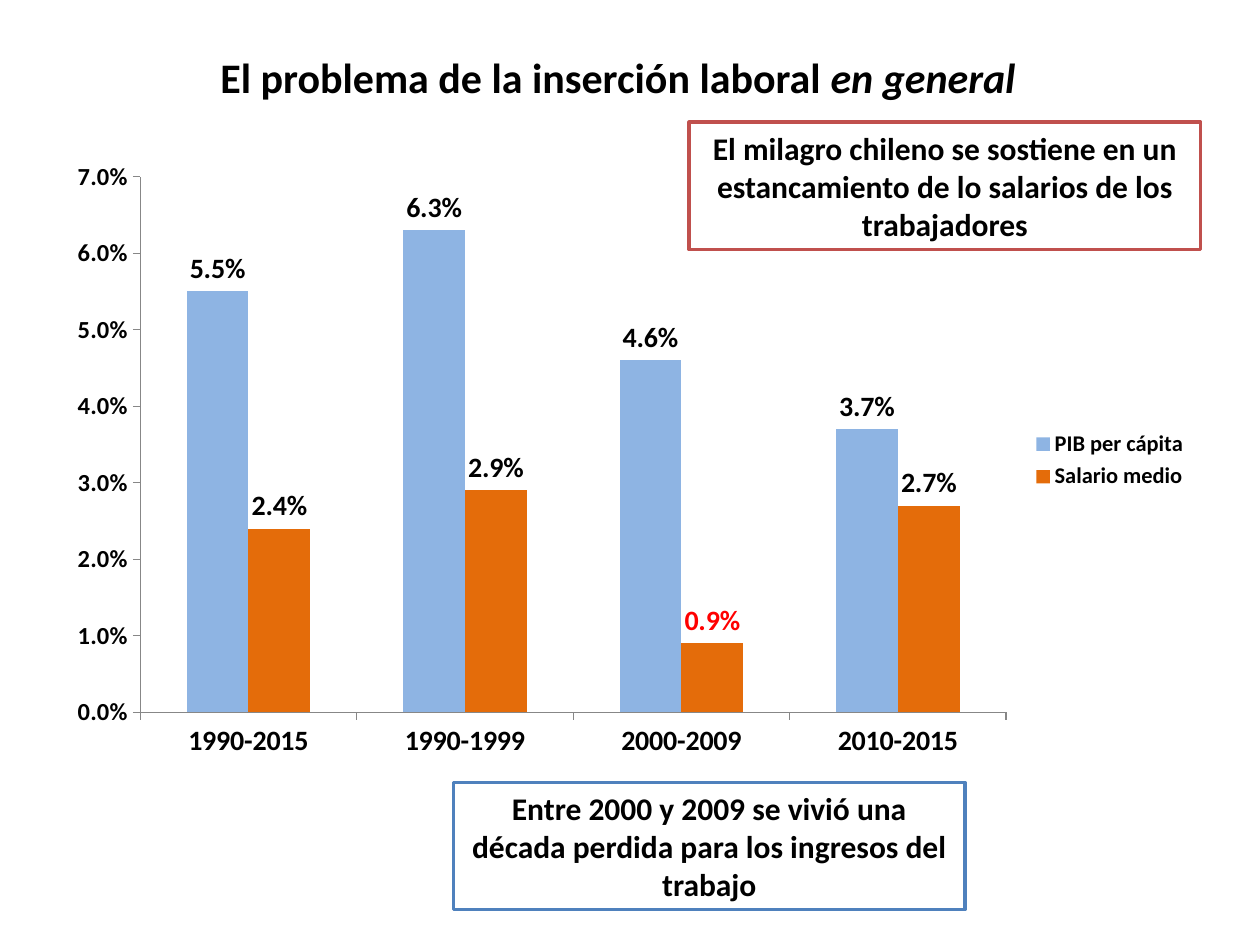
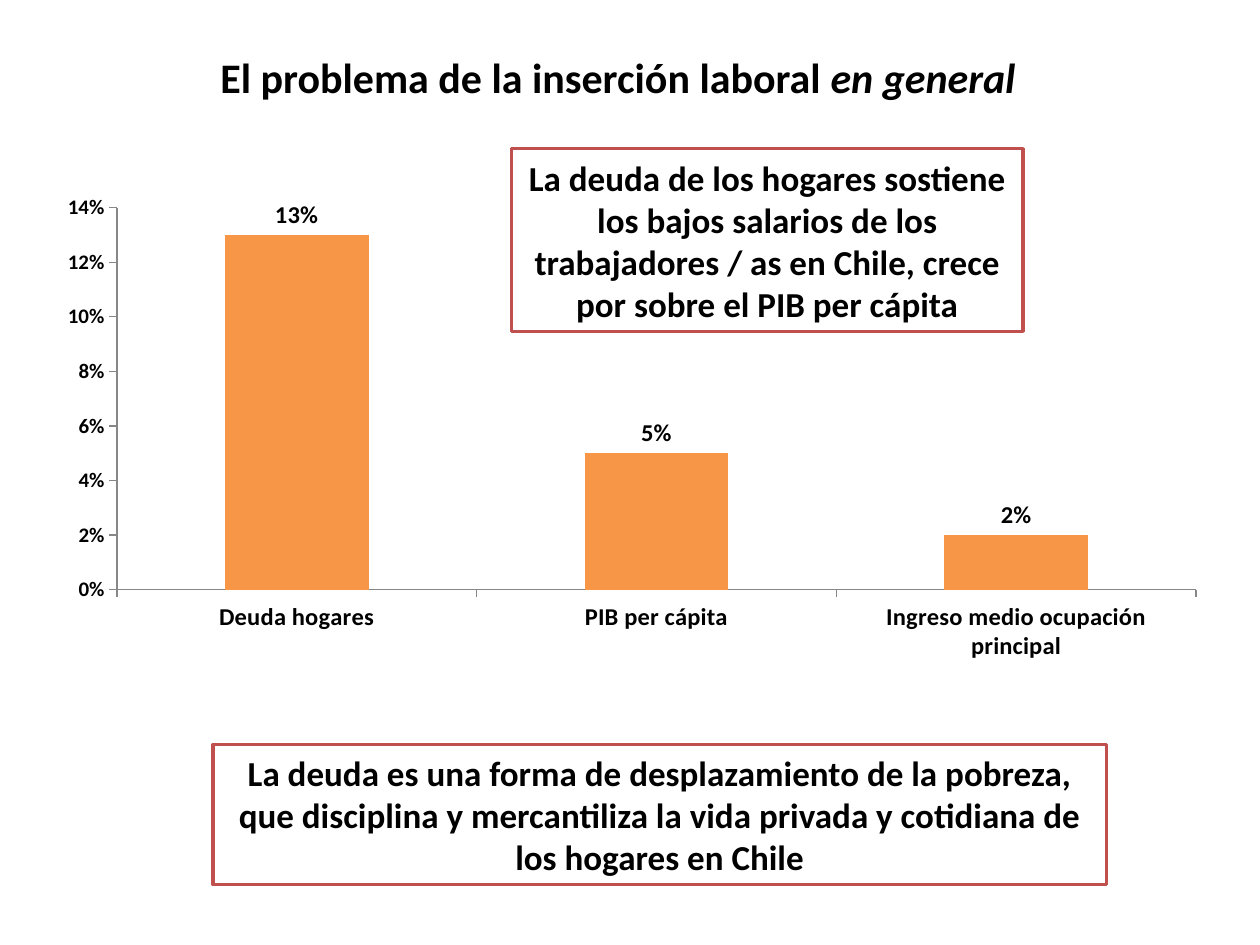
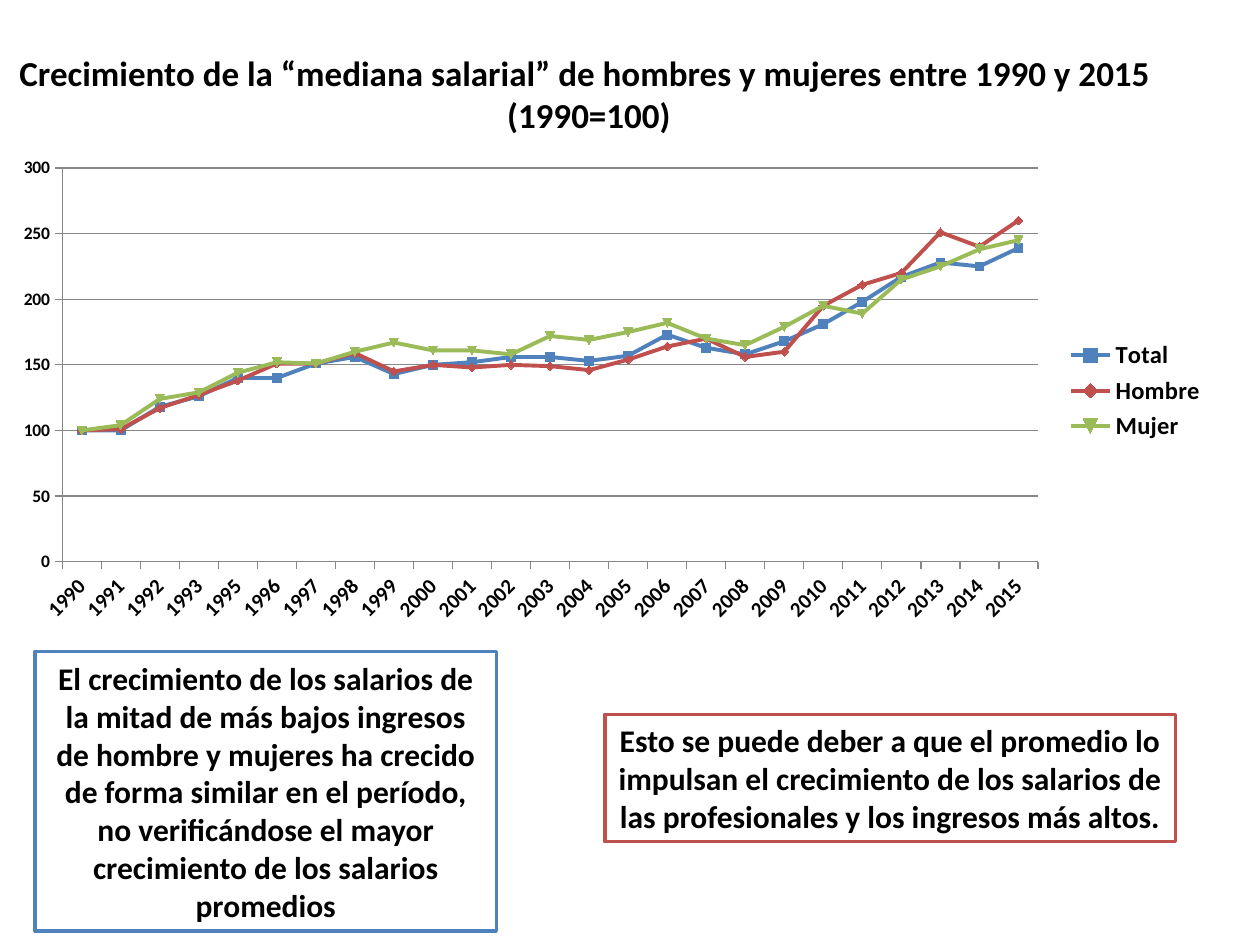
from pptx import Presentation
from pptx.chart.data import CategoryChartData
from pptx.dml.color import RGBColor
from pptx.enum.chart import XL_CHART_TYPE, XL_LABEL_POSITION, XL_LEGEND_POSITION, XL_TICK_MARK
from pptx.enum.shapes import MSO_SHAPE
from pptx.enum.text import MSO_ANCHOR, MSO_AUTO_SIZE, PP_ALIGN
from pptx.oxml import parse_xml
from pptx.oxml.ns import nsdecls
from pptx.util import Inches, Pt

COLUMNS = XL_CHART_TYPE.COLUMN_CLUSTERED
LINES = XL_CHART_TYPE.LINE
OUTSIDE_END = XL_LABEL_POSITION.OUTSIDE_END
LEGEND_RIGHT = XL_LEGEND_POSITION.RIGHT
TICK_OUTSIDE = XL_TICK_MARK.OUTSIDE
RECTANGLE = MSO_SHAPE.RECTANGLE
TOP, MIDDLE = MSO_ANCHOR.TOP, MSO_ANCHOR.MIDDLE
NO_FIT = MSO_AUTO_SIZE.NONE
CENTER = PP_ALIGN.CENTER

FONT = "Calibri"
TITLE_ONLY = 5
COLORS = {
    "text": "000000", "paper": "FFFFFF", "axis": "878787", "alert": "FF0000",
    "blue": "4F81BD", "red": "C0504D", "green": "9BBB59", "orange": "F79646",
    "light blue": "8EB4E3", "dark orange": "E46C0A",
}


def color(name):
    return RGBColor.from_string(COLORS[name])


class Deck:
    """Holds the shared style and the current slide."""

    def __init__(self):
        self.presentation = Presentation()
        self.presentation.slide_width = Inches(10)
        self.presentation.slide_height = Inches(7.5)
        self.slide = None

    def style_font(self, font, size, color_name="text"):
        font.name = FONT
        font.size = Pt(size)
        font.bold = True
        font.color.rgb = color(color_name)

    def add_slide(self, title, emphasis="", size=24, left=0.28, width=9.25):
        layout = self.presentation.slide_layouts[TITLE_ONLY]
        self.slide = self.presentation.slides.add_slide(layout)
        shape = self.slide.shapes.title
        shape.left, shape.top = Inches(left), Inches(0.36)
        shape.width, shape.height = Inches(width), Inches(0.82)
        text_frame = shape.text_frame
        text_frame.text = title
        text_frame.word_wrap = True
        text_frame.auto_size = NO_FIT
        text_frame.vertical_anchor = TOP
        paragraph = text_frame.paragraphs[0]
        paragraph.alignment = CENTER
        if emphasis:
            run = paragraph.add_run()
            run.text = emphasis
            run.font.italic = True
        for run in paragraph.runs:
            self.style_font(run.font, size)

    def add_callout(self, text, left, top, width, height, line, size=18):
        shape = self.slide.shapes.add_shape(
            RECTANGLE, Inches(left), Inches(top), Inches(width), Inches(height))
        shape.shadow.inherit = False
        shape.fill.solid()
        shape.fill.fore_color.rgb = color("paper")
        shape.line.color.rgb = color(line)
        shape.line.width = Pt(2)
        text_frame = shape.text_frame
        text_frame.text = text
        text_frame.word_wrap = True
        text_frame.vertical_anchor = MIDDLE
        paragraph = text_frame.paragraphs[0]
        paragraph.alignment = CENTER
        self.style_font(paragraph.runs[0].font, size)

    def add_chart(self, kind, box, plot, categories, series, number_format):
        """Each series is a tuple of name, values and colour name."""
        data = CategoryChartData(number_format=number_format)
        data.categories = categories
        for name, values, _ in series:
            data.add_series(name, values)
        frame = self.slide.shapes.add_chart(kind, *map(Inches, box), data)
        chart = frame.chart
        chart.has_title = False
        chart.has_legend = False
        chart.font.name = FONT
        chart.font.size = Pt(10)
        chart.font.color.rgb = color("text")
        self.place_plot(chart, plot)
        chart.plots[0].vary_by_categories = False
        for chart_series, (_, _, color_name) in zip(chart.plots[0].series, series):
            if kind == LINES:
                chart_series.smooth = False
                chart_series.marker.style = None
                chart_series.format.line.color.rgb = color(color_name)
                chart_series.format.line.width = Pt(2.25)
            else:
                chart_series.format.fill.solid()
                chart_series.format.fill.fore_color.rgb = color(color_name)
        if kind == COLUMNS:
            chart.plots[0].gap_width = 150
            chart.plots[0].overlap = 0
        return chart

    def place_plot(self, chart, plot):
        values = "".join(f'<c:{tag} val="{value}"/>' for tag, value in zip("xywh", plot))
        layout = parse_xml(
            f'<c:layout {nsdecls("c")}><c:manualLayout><c:layoutTarget val="inner"/>'
            f'<c:xMode val="edge"/><c:yMode val="edge"/>{values}</c:manualLayout></c:layout>')
        plot_area = chart.plots[0]._element.getparent()
        for old_layout in plot_area.findall(layout.tag):
            plot_area.remove(old_layout)
        plot_area.insert(0, layout)

    def style_axes(self, chart, category_size, value_size, maximum, step, number_format,
                   gridlines=False):
        value_axis = chart.value_axis
        for axis, size in ((chart.category_axis, category_size), (value_axis, value_size)):
            axis.major_tick_mark = TICK_OUTSIDE
            axis.format.line.color.rgb = color("axis")
            self.style_font(axis.tick_labels.font, size)
        value_axis.minimum_scale = 0
        value_axis.maximum_scale = maximum
        value_axis.major_unit = step
        value_axis.tick_labels.number_format = number_format
        value_axis.tick_labels.number_format_is_linked = False
        value_axis.has_major_gridlines = gridlines
        if gridlines:
            value_axis.major_gridlines.format.line.color.rgb = color("axis")

    def add_labels(self, chart, size, number_format):
        for series in chart.plots[0].series:
            labels = series.data_labels
            labels.show_value = True
            labels.position = OUTSIDE_END
            labels.number_format = number_format
            labels.number_format_is_linked = False
            self.style_font(labels.font, size)

    def add_legend(self, chart, size):
        chart.has_legend = True
        chart.legend.position = LEGEND_RIGHT
        chart.legend.include_in_layout = False
        self.style_font(chart.legend.font, size)


def growth_slide(deck):
    deck.add_slide("El problema de la inserción laboral ", "en general")
    chart = deck.add_chart(
        COLUMNS, (0.44, 1.18, 9.09, 4.95), (0.074, 0.045, 0.756, 0.859),
        ["1990-2015", "1990-1999", "2000-2009", "2010-2015"],
        [("PIB per cápita", (0.055, 0.063, 0.046, 0.037), "light blue"),
         ("Salario medio", (0.024, 0.029, 0.009, 0.027), "dark orange")], "0.0%")
    deck.style_axes(chart, 16, 14, 0.07, 0.01, "0.0%")
    deck.add_labels(chart, 16, "0.0%")
    deck.add_legend(chart, 12.8)
    # Lost decade in red
    lost_decade = chart.plots[0].series[1].points[2].data_label
    deck.style_font(lost_decade.font, 16, "alert")
    lost_decade.position = OUTSIDE_END
    deck.add_callout("El milagro chileno se sostiene en un estancamiento de lo salarios "
                     "de los trabajadores", 5.47, 0.97, 4.06, 1.01, "red")
    deck.add_callout("Entre 2000 y 2009 se vivió una década perdida para los ingresos "
                     "del trabajo", 3.6, 6.21, 4.06, 1.01, "blue")


def debt_slide(deck):
    deck.add_slide("El problema de la inserción laboral ", "en general")
    chart = deck.add_chart(
        COLUMNS, (0.28, 1.55, 9.25, 3.7), (0.07, 0.027, 0.926, 0.832),
        ["Deuda hogares", "PIB per cápita", "Ingreso medio ocupación principal"],
        [("Series 1", (0.13, 0.05, 0.02), "orange")], "0%")
    deck.style_axes(chart, 14, 12, 0.14, 0.02, "0%")
    deck.add_labels(chart, 14, "0%")
    deck.add_callout("La deuda de los hogares sostiene los bajos salarios de los "
                     "trabajadores / as en Chile, crece por sobre el PIB per cápita",
                     4.06, 1.18, 4.06, 1.45, "red", 20)
    deck.add_callout("La deuda es una forma de desplazamiento de la pobreza, que disciplina "
                     "y mercantiliza la vida privada y cotidiana de los hogares en Chile",
                     1.69, 5.91, 7.09, 1.11, "red", 20)


def median_slide(deck):
    deck.add_slide("Crecimiento de la “mediana salarial” de hombres y mujeres entre 1990 y 2015 "
                   "\v(1990=100)", size=20, left=-0.09, width=9.53)
    years = [str(year) for year in range(1990, 2016) if year != 1994]
    total = (100, 100, 118, 126, 140, 140, 151, 156, 143, 150, 152, 156, 156,
             153, 157, 173, 163, 158, 168, 181, 198, 217, 228, 225, 239)
    men = (100, 101, 117, 127, 138, 151, 151, 159, 145, 150, 148, 150, 149,
           146, 154, 164, 170, 156, 160, 195, 211, 220, 251, 240, 260)
    women = (100, 104, 124, 129, 144, 152, 151, 160, 167, 161, 161, 158, 172,
             169, 175, 182, 170, 165, 179, 195, 189, 215, 225, 238, 245)
    chart = deck.add_chart(
        LINES, (0, 1.18, 9.67, 3.84), (0.051, 0.04, 0.801, 0.814), years,
        [("Total", total, "blue"), ("Hombre", men, "red"), ("Mujer", women, "green")], "0")
    deck.style_axes(chart, 12, 10, 300, 50, "0", gridlines=True)
    deck.add_legend(chart, 14)
    # Slanted years
    chart.category_axis._element.txPr.bodyPr.set("rot", "-2700000")
    deck.add_callout("El crecimiento de los salarios de la mitad de más bajos ingresos de "
                     "hombre y mujeres ha crecido de forma similar en el período, no "
                     "verificándose el mayor crecimiento de los salarios promedios",
                     0.28, 5.17, 3.66, 2.22, "blue")
    deck.add_callout("Esto se puede deber a que el promedio lo impsulan el crecimiento de los "
                     "salarios de las profesionales y los ingresos más altos.".replace(
                         "impsulan", "impulsan"), 4.8, 5.67, 4.53, 1.01, "red")


def main():
    deck = Deck()
    growth_slide(deck)
    debt_slide(deck)
    median_slide(deck)
    deck.presentation.save("out.pptx")


if __name__ == "__main__":
    main()
